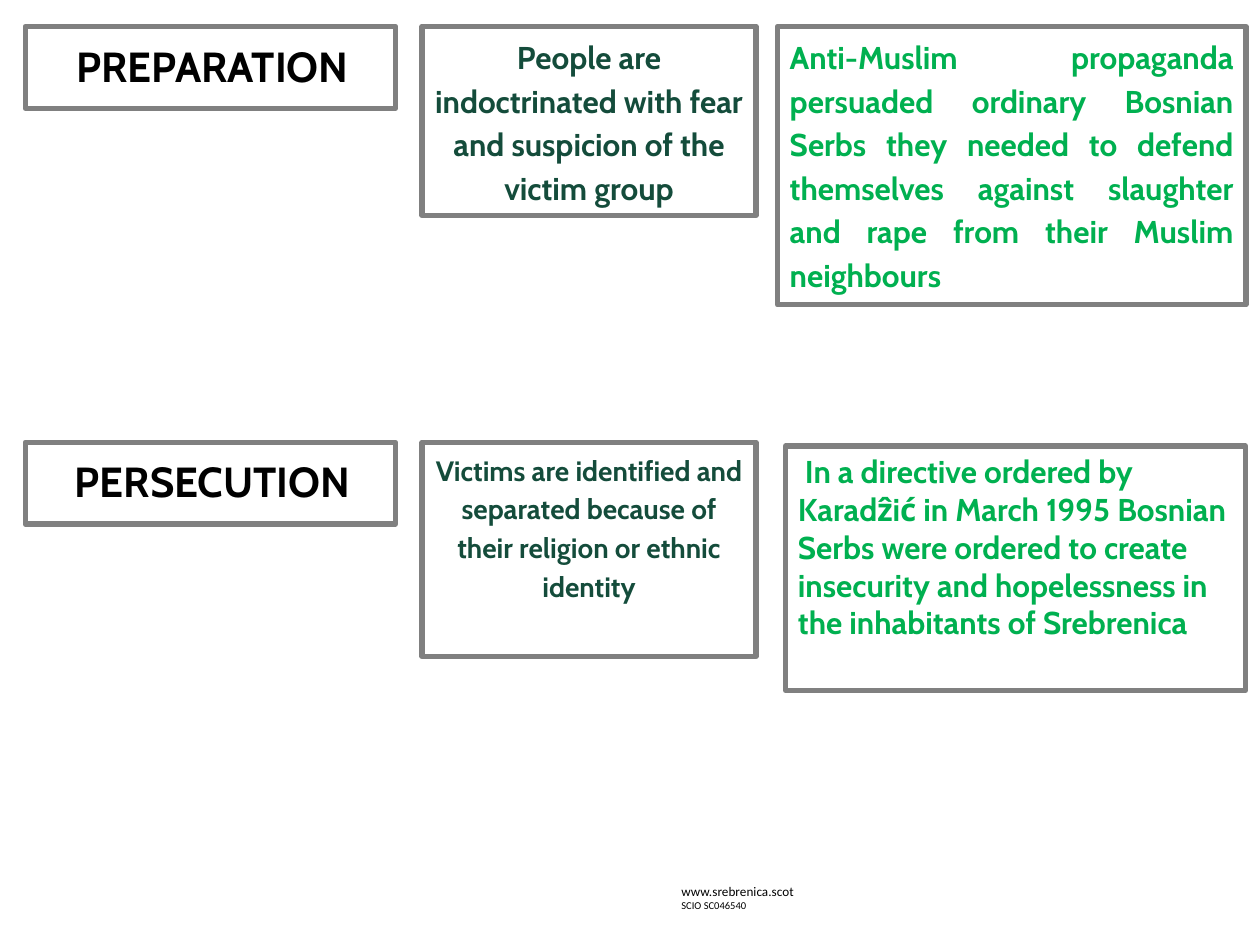
from pptx import Presentation
from pptx.dml.color import RGBColor
from pptx.enum.shapes import MSO_SHAPE
from pptx.enum.text import MSO_ANCHOR, PP_ALIGN
from pptx.util import Pt

BLACK = RGBColor(0x00, 0x00, 0x00)
WHITE = RGBColor(0xFF, 0xFF, 0xFF)
GREY = RGBColor(0x80, 0x80, 0x80)
PINE = RGBColor(0x14, 0x4C, 0x3B)
GREEN = RGBColor(0x00, 0xB0, 0x50)

deck = Presentation()
deck.slide_width, deck.slide_height = Pt(720), Pt(540)
slide = deck.slides.add_slide(deck.slide_layouts[6])


def style(para, font, size, color, bold=False):
    for run in para.runs:
        run.font.name = font
        run.font.size = Pt(size)
        run.font.bold = bold
        run.font.color.rgb = color


foot = slide.shapes.add_textbox(Pt(382.3), Pt(501.1), Pt(182.2), Pt(28.8))
foot.text_frame.word_wrap = True
foot.text_frame.text = "www.srebrenica.scot\nSCIO SC046540"
for para, size in zip(foot.text_frame.paragraphs, (7.5, 6)):
    style(para, "Calibri", size, BLACK)

TOP, LOW = 15.1, 252.7
MID, FULL, LEFT = PP_ALIGN.CENTER, PP_ALIGN.JUSTIFY, PP_ALIGN.LEFT

# left, top, width, height, size, colour, alignment, line spacing, indent, text
boxes = [
    (14.4, TOP, 211.7, 46.8, 24, BLACK, MID, 1.15, 2.5, "PREPARATION"),
    (14.4, LOW, 211.7, 46.8, 24, BLACK, MID, 1.15, 2.5, "PERSECUTION"),
    (241.2, TOP, 190.8, 108, 18, PINE, MID, 1.15, 0,
     "People are indoctrinated with fear and suspicion of the victim group"),
    (444.2, TOP, 267.8, 159.1, 18, GREEN, FULL, 1.15, 0,
     "Anti-Muslim propaganda persuaded ordinary Bosnian Serbs they needed "
     "to defend themselves against slaughter and rape from their Muslim "
     "neighbours"),
    (241.2, LOW, 190.8, 122.4, 16, PINE, MID, 1.15, 0,
     "Victims are identified and separated because of their religion or "
     "ethnic identity"),
    (448.9, 254.9, 262.8, 139.7, 18, GREEN, LEFT, 1, 4,
     "In a directive ordered by Karadẑić in March 1995 Bosnian Serbs were "
     "ordered to create insecurity and hopelessness in the inhabitants of "
     "Srebrenica"),
]

for left, top, width, height, size, color, align, space, indent, text in boxes:
    box = slide.shapes.add_shape(
        MSO_SHAPE.RECTANGLE, Pt(left), Pt(top), Pt(width), Pt(height))
    box.shadow.inherit = False
    box.fill.solid()
    box.fill.fore_color.rgb = WHITE
    box.line.color.rgb = GREY
    box.line.width = Pt(3)
    frame = box.text_frame
    frame.word_wrap = True
    frame.vertical_anchor = MSO_ANCHOR.TOP
    frame.text = text
    para = frame.paragraphs[0]
    para.alignment = align
    para.line_spacing = space
    if indent:
        para._p.get_or_add_pPr().set("indent", str(Pt(indent)))
    style(para, "Cabin", size, color, bold=True)

deck.save("out.pptx")
